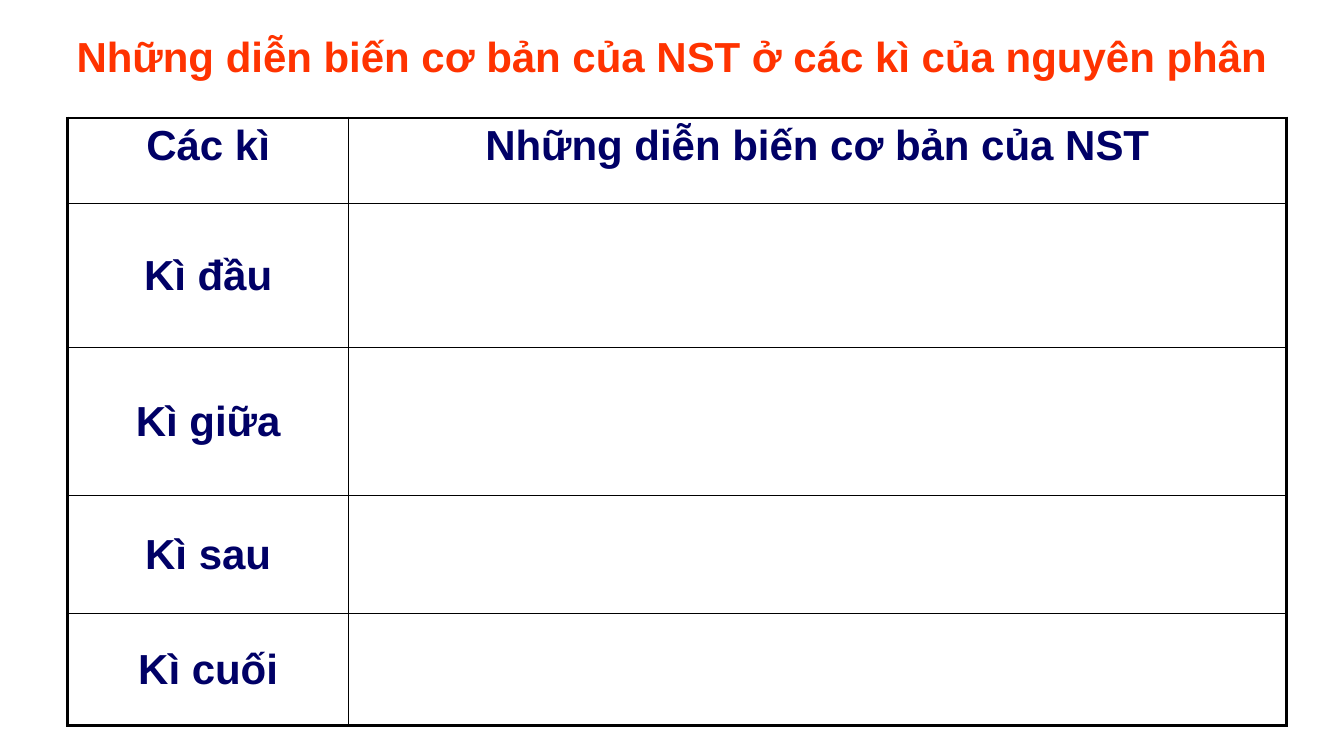
import pptx
import pptx.dml.color
import pptx.enum.text
import pptx.oxml
import pptx.oxml.ns
import pptx.util

Inches, Pt = pptx.util.Inches, pptx.util.Pt
RGBColor = pptx.dml.color.RGBColor
ANCHOR = pptx.enum.text.MSO_ANCHOR

ORANGE = RGBColor(0xFF, 0x33, 0x00)
NAVY = RGBColor(0x00, 0x00, 0x66)
BLACK = RGBColor(0x00, 0x00, 0x00)
THIN, THICK = Pt(1), Pt(2.25)


def write(tf, text, color):
    tf.text = text
    p = tf.paragraphs[0]
    p.alignment = pptx.enum.text.PP_ALIGN.CENTER
    font = p.runs[0].font
    font.name, font.size, font.bold = "Arial", Pt(30), True
    font.color.rgb = color


def add_border(cell, side, width):
    cell._tc.get_or_add_tcPr().append(pptx.oxml.parse_xml(
        f'<a:ln{side} {pptx.oxml.ns.nsdecls("a")} w="{width}">'
        f'<a:solidFill><a:srgbClr val="{BLACK}"/></a:solidFill></a:ln{side}>'))


prs = pptx.Presentation()
prs.slide_width, prs.slide_height = Inches(13.33), Inches(7.5)
s = prs.slides.add_slide(prs.slide_layouts[6])

# Title
title = s.shapes.add_textbox(Inches(0.63), Inches(-0.28), Inches(12.08), Inches(1.17))
tf = title.text_frame
tf.word_wrap = True
tf.vertical_anchor = ANCHOR.BOTTOM
tf.margin_bottom = Inches(0.09)
write(tf, "Những diễn biến cơ bản của NST ở các kì của nguyên phân", ORANGE)

# Table of phases, with the second column left to fill in
rows = [
    (0.85, ["Các kì", "Những diễn biến cơ bản của NST"]),
    (1.43, ["Kì đầu", ""]),
    (1.47, ["Kì giữa", ""]),
    (1.17, ["Kì sau", ""]),
    (1.11, ["Kì cuối", ""]),
]
col_widths = [2.79, 9.3]
table = s.shapes.add_table(len(rows), len(col_widths), Inches(0.67), Inches(1.17),
                           Inches(sum(col_widths)), Inches(6.03)).table
for column, width in zip(table.columns, col_widths):
    column.width = Inches(width)

last_row, last_col = len(rows) - 1, len(col_widths) - 1
for i, (height, texts) in enumerate(rows):
    table.rows[i].height = Inches(height)
    for j, text in enumerate(texts):
        cell = table.cell(i, j)
        cell.vertical_anchor = ANCHOR.MIDDLE if i else ANCHOR.TOP
        if text:
            write(cell.text_frame, text, NAVY)
        # Thick outer frame, thin inner lines
        outer = {"L": j == 0, "R": j == last_col, "T": i == 0, "B": i == last_row}
        for side, is_outer in outer.items():
            add_border(cell, side, THICK if is_outer else THIN)
        cell.fill.background()

prs.save("out.pptx")
